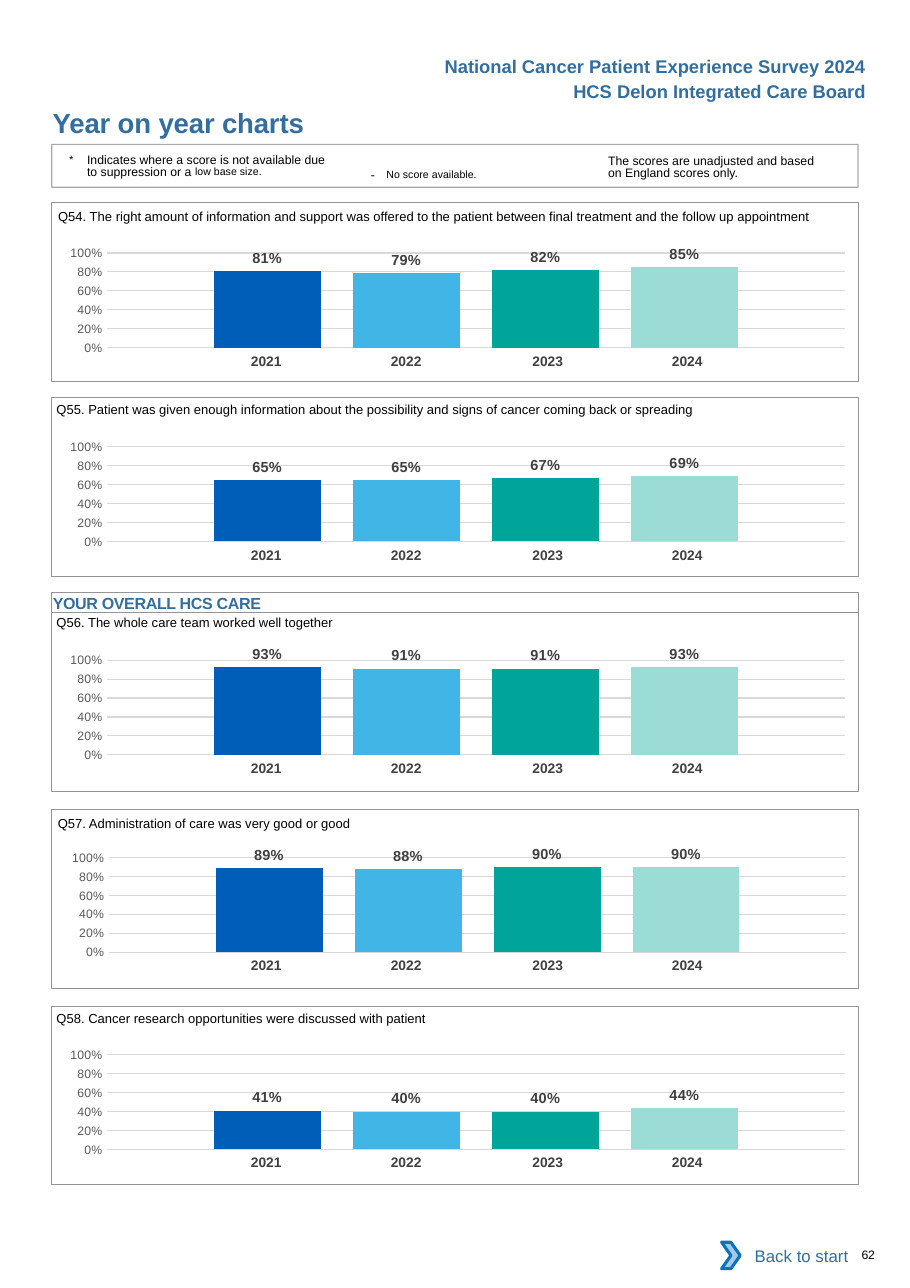
from dataclasses import dataclass
from typing import Optional

from lxml import etree
from pptx import Presentation
from pptx import util as u
from pptx.chart.data import CategoryChartData
from pptx.dml.color import RGBColor
from pptx.enum import chart as ch, shapes, text
from pptx.oxml.ns import qn

BLACK = RGBColor(0x00, 0x00, 0x00)
WHITE = RGBColor(0xFF, 0xFF, 0xFF)
TITLE_BLUE = RGBColor(0x33, 0x6E, 0x9F)
FRAME_GREY = RGBColor(0x93, 0x95, 0x98)
GRID_GREY = RGBColor(0xD9, 0xD9, 0xD9)
AXIS_GREY = RGBColor(0x59, 0x59, 0x59)
LABEL_GREY = RGBColor(0x40, 0x40, 0x40)
YEAR_GREY = RGBColor(0x41, 0x40, 0x42)
CHEVRON_FILL = RGBColor(0xA8, 0xC7, 0xE9)
CHEVRON_LINE = RGBColor(0x0A, 0x74, 0xBB)
YEAR_COLORS = (RGBColor(0x00, 0x5E, 0xB8), RGBColor(0x41, 0xB6, 0xE6),
               RGBColor(0x00, 0xA4, 0x99), RGBColor(0x9C, 0xDC, 0xD7))

YEARS = ("2021", "2022", "2023", "2024")
YEAR_WIDTHS = (91.5, 91.5, 96.5, 91.5)
YEAR_RIGHT_MARGINS = (0, 0, 2.9, 8.6)
FRAME_LEFT, FRAME_WIDTH, FRAME_HEIGHT = 33.8, 527, 116.6
PLOT_LAYOUT = {"x": 0.079, "y": 0.145, "w": 0.915, "h": 0.666}
LEFT, RIGHT, CENTER = text.PP_ALIGN.LEFT, text.PP_ALIGN.RIGHT, text.PP_ALIGN.CENTER


@dataclass(frozen=True)
class Run:
    text: str
    size: float = 8
    color: RGBColor = BLACK
    bold: bool = False
    spacing: float = 0
    baseline: int = 0


@dataclass(frozen=True)
class Label:
    left: float
    top: float
    width: float
    height: float
    runs: tuple[Run, ...]
    align: text.PP_ALIGN = LEFT
    margin_x: float = 0
    margin_top: float = 0
    line_spacing: Optional[float] = None
    hanging: float = 0


@dataclass(frozen=True)
class Panel:
    question: str
    question_left: float
    question_top: float
    frame_top: float
    chart_left: float
    chart_top: float
    scores: tuple[float, ...]


PANELS = (
    Panel("Q54. The right amount of information and support was offered to the patient "
          "between final treatment and the follow up appointment",
          38, 129.6, 132.5, 28.3, 151.9, (0.81, 0.79, 0.82, 0.85)),
    Panel("Q55. Patient was given enough information about the possibility and signs of "
          "cancer coming back or spreading",
          36.9, 255.8, 259.9, 28.3, 278.6, (0.65, 0.65, 0.67, 0.69)),
    Panel("Q56. The whole care team worked well together",
          36.9, 395.3, 400.3, 28.3, 418, (0.93, 0.91, 0.91, 0.93)),
    Panel("Q57. Administration of care was very good or good",
          37.8, 526.4, 529.2, 29.4, 547, (0.89, 0.88, 0.90, 0.90)),
    Panel("Q58. Cancer research opportunities were discussed with patient",
          36.9, 653.8, 657.4, 28.3, 675.9, (0.41, 0.40, 0.40, 0.44)),
)

LABELS = (
    Label(252, 32.7, 321.1, 21.6,
          (Run("National Cancer Patient Experience Survey 2024", 12, TITLE_BLUE, True),),
          RIGHT, 7.2, 3.6),
    Label(252, 49, 321.1, 21.6,
          (Run("HCS Delon Integrated Care Board", 12, TITLE_BLUE, True),), RIGHT, 7.2, 3.6),
    Label(34.5, 69.1, 324, 21.6, (Run("Year on year charts", 18, TITLE_BLUE, True, -0.1),)),
    Label(45.4, 99.4, 172, 20,
          (Run("*\t", 12, baseline=3),
           Run("Indicates where a score is not available due to suppression or a "),
           Run("low base size.", 12, baseline=7)),
          margin_top=2.2, line_spacing=8.1, hanging=11.5),
    Label(235.4, 101.5, 131.8, 17.3,
          (Run("- ", spacing=2.6), Run("No score available.", 12, baseline=3)),
          margin_x=7.2, margin_top=3.6),
    Label(397.4, 99.4, 144.7, 19.4,
          (Run("The scores are unadjusted and based on England scores only."),),
          margin_top=2.2, line_spacing=8.1),
    Label(563.1, 815.4, 30, 9.4, (Run("62", spacing=-0.2),)),
)


def add_runs(p, runs: tuple[Run, ...]) -> None:
    for run in runs:
        r = p.add_run()
        r.text = run.text
        style_font(r.font, run.size, run.color, run.bold)
        props = r._r.get_or_add_rPr()
        if run.spacing:
            props.set("spc", str(round(run.spacing * 100)))
        if run.baseline:
            props.set("baseline", str(run.baseline * 1000))


def style_font(font, size: float, color: RGBColor, bold: bool = False) -> None:
    font.name, font.size, font.bold = "Arial", u.Pt(size), bold
    font.color.rgb = color


def set_margins(tf, left: float, top: float, right: float, bottom: float) -> None:
    tf.margin_left, tf.margin_top = u.Pt(left), u.Pt(top)
    tf.margin_right, tf.margin_bottom = u.Pt(right), u.Pt(bottom)


def add_label(s, label: Label) -> None:
    sp = s.shapes.add_textbox(u.Pt(label.left), u.Pt(label.top),
                              u.Pt(label.width), u.Pt(label.height))
    tf = sp.text_frame
    tf.word_wrap = True
    set_margins(tf, label.margin_x, label.margin_top, label.margin_x, 0)
    p = tf.paragraphs[0]
    p.alignment = label.align
    if label.line_spacing:
        p.line_spacing = u.Pt(label.line_spacing)
    if label.hanging:
        props = p._p.get_or_add_pPr()
        props.set("marL", str(u.Pt(label.hanging)))
        props.set("indent", str(-u.Pt(label.hanging)))
    add_runs(p, label.runs)


def add_box(s, kind: shapes.MSO_SHAPE, left: float, top: float, width: float, height: float,
            fill: Optional[RGBColor] = None, line: Optional[RGBColor] = None,
            line_width: float = 0.5):
    sp = s.shapes.add_shape(kind, u.Pt(left), u.Pt(top), u.Pt(width), u.Pt(height))
    sp.shadow.inherit = False
    for part, color in ((sp.fill, fill), (sp.line.fill, line)):
        if color is None:
            part.background()
        else:
            part.solid()
            part.fore_color.rgb = color
    if line is not None:
        sp.line.width = u.Pt(line_width)
    return sp


def add_years(s, top: float) -> None:
    table = s.shapes.add_table(1, len(YEARS), u.Pt(124.6), u.Pt(top),
                               u.Pt(sum(YEAR_WIDTHS)), u.Pt(19.4)).table
    table.first_row = table.horz_banding = False
    for i, (year, width, right) in enumerate(zip(YEARS, YEAR_WIDTHS, YEAR_RIGHT_MARGINS)):
        table.columns[i].width = u.Pt(width)
        cell = table.cell(0, i)
        cell.fill.background()
        set_margins(cell, 7.2, 3.6, right, 3.6)
        p = cell.text_frame.paragraphs[0]
        p.alignment = CENTER
        add_runs(p, (Run(year, 9, YEAR_GREY, True),))


def add_score_chart(s, panel: Panel) -> None:
    data = CategoryChartData(number_format="0%")
    data.categories = ["1"]
    for i, score in enumerate(panel.scores, 1):
        data.add_series(f"Series {i}", [score])
    chart = s.shapes.add_chart(ch.XL_CHART_TYPE.COLUMN_CLUSTERED, u.Pt(panel.chart_left),
                               u.Pt(panel.chart_top), u.Pt(527), u.Pt(92.9), data).chart
    chart.has_legend = chart.has_title = False
    chart.font.name, chart.font.size = "Calibri", u.Pt(10)
    chart.font.color.rgb = BLACK
    chart.category_axis.visible = False
    axis = chart.value_axis
    axis.minimum_scale, axis.maximum_scale, axis.major_unit = 0, 1, 0.2
    axis.major_tick_mark = axis.minor_tick_mark = ch.XL_TICK_MARK.NONE
    axis.format.line.fill.background()
    axis.major_gridlines.format.line.color.rgb = GRID_GREY
    axis.major_gridlines.format.line.width = u.Pt(0.75)
    axis.tick_labels.number_format, axis.tick_labels.number_format_is_linked = "0%", False
    style_font(axis.tick_labels.font, 8, AXIS_GREY)
    plot = chart.plots[0]
    plot.gap_width, plot.overlap, plot.vary_by_categories = 200, -30, False
    for series, color in zip(plot.series, YEAR_COLORS):
        series.format.fill.solid()
        series.format.fill.fore_color.rgb = color
        labels = series.data_labels
        labels.show_value, labels.position = True, ch.XL_LABEL_POSITION.OUTSIDE_END
        labels.number_format, labels.number_format_is_linked = "0%", False
        style_font(labels.font, 9.5, LABEL_GREY, True)
    set_plot_layout(chart)


def set_plot_layout(chart) -> None:
    area = chart._chartSpace.find(".//" + qn("c:plotArea"))
    for old in area.findall(qn("c:layout")):
        area.remove(old)
    layout = etree.Element(qn("c:layout"))
    manual = etree.SubElement(layout, qn("c:manualLayout"))
    settings = {"layoutTarget": "inner", "xMode": "edge", "yMode": "edge", **PLOT_LAYOUT}
    for name, value in settings.items():
        etree.SubElement(manual, qn(f"c:{name}")).set("val", str(value))
    area.insert(0, layout)


def add_panel(s, panel: Panel) -> None:
    add_label(s, Label(panel.question_left, panel.question_top, 520, 17.3,
                       (Run(panel.question, 8.5),), margin_top=6.5))
    add_years(s, panel.chart_top + 75.6)
    add_score_chart(s, panel)
    add_box(s, shapes.MSO_SHAPE.RECTANGLE, FRAME_LEFT, panel.frame_top,
            FRAME_WIDTH, FRAME_HEIGHT, line=FRAME_GREY)


def add_section_heading(s) -> None:
    sp = add_box(s, shapes.MSO_SHAPE.RECTANGLE, FRAME_LEFT, 387.4, FRAME_WIDTH, 13,
                 line=FRAME_GREY)
    tf = sp.text_frame
    set_margins(tf, 0.7, 0.7, 0, 0)
    tf.vertical_anchor = text.MSO_ANCHOR.TOP
    tf.paragraphs[0].alignment = LEFT
    add_runs(tf.paragraphs[0], (Run("YOUR OVERALL HCS CARE", 10.5, TITLE_BLUE, True, -0.2),))


def add_legend_frame(s) -> None:
    sp = add_box(s, shapes.MSO_SHAPE.RECTANGLE, FRAME_LEFT, 94.3, FRAME_WIDTH, 28.1,
                 line=FRAME_GREY, line_width=0.75)
    color = sp.line._ln.find(".//" + qn("a:srgbClr"))
    etree.SubElement(color, qn("a:alpha")).set("val", "80000")


def add_back_button(s) -> None:
    sp = add_box(s, shapes.MSO_SHAPE.RECTANGLE, 476.6, 805.3, 85, 30.2, fill=WHITE)
    tf = sp.text_frame
    tf.vertical_anchor = text.MSO_ANCHOR.MIDDLE
    tf.paragraphs[0].alignment = RIGHT
    add_runs(tf.paragraphs[0], (Run("Back to start", 11, TITLE_BLUE),))
    add_box(s, shapes.MSO_SHAPE.CHEVRON, 471.6, 811.8, 12.2, 17.3,
            CHEVRON_FILL, CHEVRON_LINE, 2)


def main() -> None:
    prs = Presentation()
    prs.slide_width, prs.slide_height = u.Pt(594.72), u.Pt(841.68)
    s = prs.slides.add_slide(prs.slide_layouts[6])
    for label in LABELS:
        add_label(s, label)
    add_legend_frame(s)
    add_section_heading(s)
    for panel in PANELS:
        add_panel(s, panel)
    add_back_button(s)
    prs.save("out.pptx")


if __name__ == "__main__":
    main()
